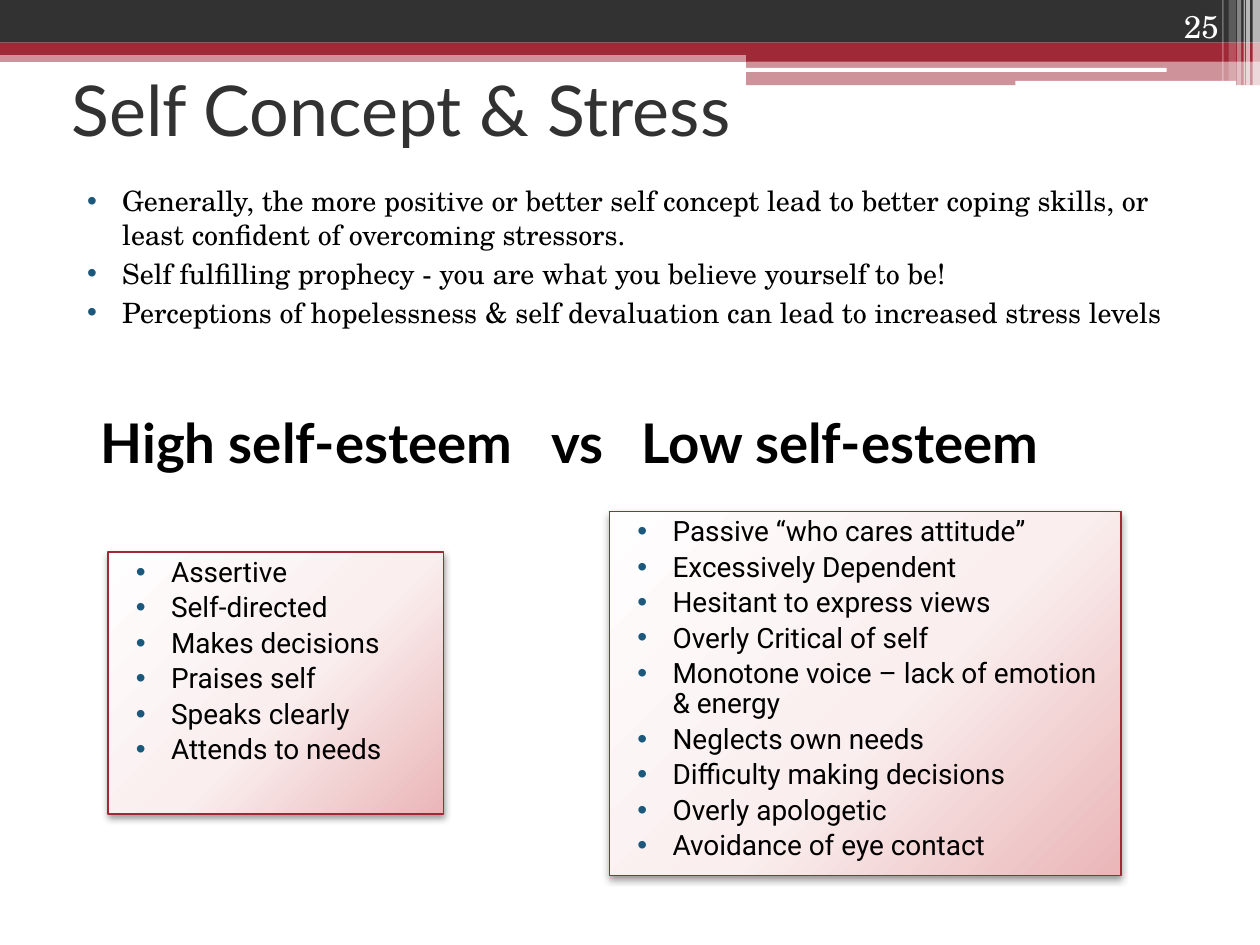
"""Builds the slide on self concept and stress."""
from pptx import Presentation
from pptx.dml.color import RGBColor
from pptx.enum import shapes, text
from pptx.oxml import parse_xml
from pptx.oxml.ns import qn
from pptx.util import Cm, Pt

NS = 'xmlns:a="http://schemas.openxmlformats.org/drawingml/2006/main"'
RED, DARK, BLUE, WHITE, BLACK = "9F2936", "323232", "1B587C", "FFFFFF", "000000"
SERIF, SANS, HEAD = "TeX Gyre Schola", "Roboto", "Lato"
STOPS = ((0, "FFFEFE"), (55, "FAEEEE"), (100, "EAB6B8"))


def rgb(code):
    return RGBColor.from_string(code)


def node(xml):
    return parse_xml(xml.replace(">", f" {NS}>", 1) if "/>" not in xml.split(">")[0] + ">"
                     else xml.replace("/>", f" {NS}/>", 1))


class Deck:
    def __init__(self):
        self.prs = Presentation()
        self.prs.slide_width, self.prs.slide_height = Cm(25.4), Cm(19.05)
        self.slide = self.prs.slides.add_slide(self.prs.slide_layouts[1])

    def bar(self, x, y, w, h, color, alpha=100, kind="RECTANGLE"):
        shape = self.slide.shapes.add_shape(
            shapes.MSO_SHAPE[kind], Cm(x), Cm(y), Cm(w), Cm(h))
        shape.shadow.inherit = False
        shape.fill.solid()
        shape.fill.fore_color.rgb = rgb(color)
        shape.line.fill.background()
        if alpha < 100:
            tint = shape._element.spPr.find(qn("a:solidFill"))[0]
            tint.append(node(f'<a:alpha val="{alpha * 1000}"/>'))

    def holder(self, index, x, y, w, h):
        shape = self.slide.placeholders[index]
        shape.left, shape.top, shape.width, shape.height = Cm(x), Cm(y), Cm(w), Cm(h)
        self.slide.shapes._spTree.append(shape._element)
        return shape

    def label(self, x, y, w, h):
        return self.slide.shapes.add_textbox(Cm(x), Cm(y), Cm(w), Cm(h))

    def card(self, x, y, w, h):
        shape = self.slide.shapes.add_shape(
            shapes.MSO_SHAPE.RECTANGLE, Cm(x), Cm(y), Cm(w), Cm(h))
        shape.shadow.inherit = False
        shape.line.color.rgb = rgb(RED)
        shape.line.width = Pt(0.75)
        stops = "".join(f'<a:gs pos="{pos * 1000}"><a:srgbClr val="{color}"/></a:gs>'
                        for pos, color in STOPS)
        props = shape._element.spPr
        props.insert(2, node(
            f'<a:gradFill><a:gsLst>{stops}</a:gsLst><a:path path="circle">'
            '<a:fillToRect l="-40000" t="-90000" r="140000" b="190000"/>'
            '</a:path></a:gradFill>'))
        props.find(qn("a:effectLst")).append(node(
            f'<a:outerShdw blurRad="{Pt(4.1)}" dist="{Pt(2)}" dir="5400000">'
            f'<a:srgbClr val="{BLACK}"><a:alpha val="40000"/></a:srgbClr></a:outerShdw>'))
        return shape

    def frame(self, shape, anchor):
        frame = shape.text_frame
        frame.word_wrap = True
        frame.auto_size = text.MSO_AUTO_SIZE.NONE
        frame.vertical_anchor = text.MSO_ANCHOR[anchor]
        return frame

    def style(self, para, face, size, color, bold=False):
        font = para.font
        font.name, font.size, font.bold = face, Pt(size), bold
        font.color.rgb = rgb(color)

    def line(self, shape, words, face, size, color, anchor="MIDDLE",
             align="LEFT", bold=False, tabs=()):
        frame = self.frame(shape, anchor)
        frame.text = words
        para = frame.paragraphs[0]
        para.alignment = text.PP_ALIGN[align]
        if tabs:
            marks = "".join(f'<a:tab pos="{Cm(tab)}" algn="l"/>' for tab in tabs)
            para._p.get_or_add_pPr().append(node(f"<a:tabLst>{marks}</a:tabLst>"))
        self.style(para, face, size, color, bold)

    def bullets(self, shape, items, face, space=1.0):
        frame = self.frame(shape, "TOP")
        frame.text = "\n".join(items)
        for i, para in enumerate(frame.paragraphs):
            para.alignment = text.PP_ALIGN.LEFT
            para.line_spacing = space
            para.space_before = Pt(3 if i else 0)
            props = para._p.get_or_add_pPr()
            props.set("marL", str(Cm(1.02)))
            props.set("indent", str(Cm(-0.71)))
            props.append(node(f'<a:buClr><a:srgbClr val="{BLUE}"/></a:buClr>'))
            props.append(node('<a:buFont typeface="Arial"/>'))
            props.append(node('<a:buChar char="•"/>'))
            self.style(para, face, 16, BLACK)


def main():
    deck = Deck()
    deck.bar(0, 1.02, 25.4, 0.23, RED, 50)
    deck.bar(0, 0, 25.4, 0.86, DARK)
    deck.bar(0, 0.86, 25.4, 0.25, RED)
    deck.bar(15.04, 0.99, 10.36, 0.25, RED)
    deck.bar(15.04, 1.22, 10.36, 0.5, RED, 50)
    deck.bar(15.01, 1.37, 8.51, 0.08, WHITE, kind="ROUNDED_RECTANGLE")
    deck.bar(20.47, 1.63, 4.45, 0.1, WHITE, kind="ROUNDED_RECTANGLE")
    for x, w, h, alpha in ((25.25, 0.15, 1.73, 65), (25.12, 0.08, 1.73, 65),
                           (25.07, 0.03, 1.73, 60), (24.94, 0.08, 1.73, 40),
                           (24.77, 0.15, 1.63, 20), (24.64, 0.03, 1.63, 30)):
        deck.bar(x, 0, w, h, WHITE, alpha)

    deck.line(deck.holder(0, 1.19, 1.19, 22.86, 1.98),
              "Self Concept & Stress", HEAD, 40, DARK)
    deck.bullets(deck.holder(1, 1.19, 3.58, 22.86, 3.58), (
        "Generally, the more positive or better self concept lead to better "
        "coping skills, or least confident of overcoming stressors.",
        "Self fulfilling prophecy - you are what you believe yourself to be!",
        "Perceptions of hopelessness & self devaluation can lead to increased "
        "stress levels"), SERIF)
    deck.line(deck.label(22.71, 0, 2.11, 1.02), "25", SERIF, 18, WHITE,
              "BOTTOM", "RIGHT")
    deck.line(deck.label(1.78, 7.92, 22.02, 1.98),
              "High self-esteem\tvs\tLow self-esteem", HEAD, 31.2, BLACK,
              bold=True, tabs=(9.08, 10.9))
    deck.bullets(deck.card(2.18, 11.13, 6.76, 5.28), (
        "Assertive", "Self-directed", "Makes decisions", "Praises self",
        "Speaks clearly", "Attends to needs"), SANS, 0.9)
    deck.bullets(deck.card(12.29, 10.31, 10.31, 7.34), (
        "Passive “who cares attitude”", "Excessively Dependent",
        "Hesitant to express views", "Overly Critical of self",
        "Monotone voice – lack of emotion & energy", "Neglects own needs",
        "Difficulty making decisions", "Overly apologetic",
        "Avoidance of eye contact"), SANS, 0.9)
    deck.prs.save("out.pptx")


if __name__ == "__main__":
    main()
